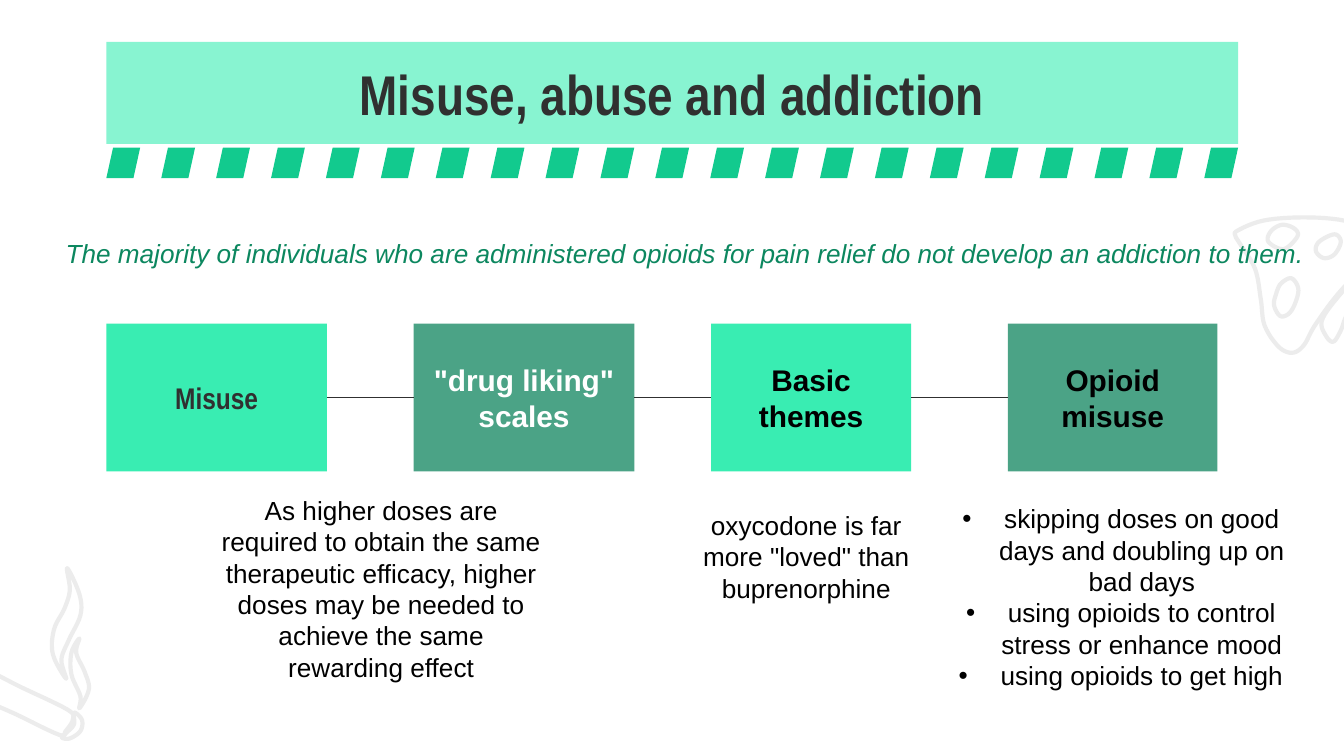
from itertools import pairwise

from lxml import etree
from pptx import Presentation
from pptx.dml.color import RGBColor
from pptx.enum.shapes import MSO_CONNECTOR, MSO_SHAPE
from pptx.enum.text import MSO_ANCHOR, MSO_AUTO_SIZE, PP_ALIGN
from pptx.oxml.ns import qn
from pptx.util import Cm, Pt

RECTANGLE = MSO_SHAPE.RECTANGLE
STRIPE = MSO_SHAPE.FLOWCHART_DATA
STRAIGHT = MSO_CONNECTOR.STRAIGHT
TOP, MIDDLE = MSO_ANCHOR.TOP, MSO_ANCHOR.MIDDLE
LEFT, CENTER = PP_ALIGN.LEFT, PP_ALIGN.CENTER
NO_AUTOFIT = MSO_AUTO_SIZE.NONE

COLORS = {
    "banner": "88F4D1", "stripe": "12CA8E", "bright": "39EDB2", "deep": "4BA386",
    "dark": "303030", "black": "000000", "white": "FFFFFF", "accent": "0C875F",
    "doodle": "ECECEC",
}

CIGARETTE = [
    [(-0.43, 12.59), (0.4, 12.99), (1.27, 13.41), (1.38, 13.59), (1.24, 13.82),
     (1.12, 13.89), (0.3, 13.5), (-0.63, 13.06), (-0.38, 12.85)],
    [(1.4, 13.47), (1.55, 13.61), (1.52, 13.82), (1.32, 13.96), (1.17, 13.94),
     (1.27, 13.84), (1.4, 13.69)],
    [(1.27, 10.74), (1.5, 11.23), (1.52, 11.63), (1.3, 12.1), (1.16, 12.47),
     (1.25, 12.83), (1, 12.37), (1.02, 11.9), (1.22, 11.5), (1.32, 11.15)],
    [(1.5, 12.07), (1.44, 12.34), (1.6, 12.7), (1.68, 13.03), (1.5, 13.39),
     (1.52, 13.16), (1.35, 12.75), (1.35, 12.34)],
]
PIZZA = [
    [(23.39, 4.36), (23.88, 4.17), (24.64, 4.11), (25.4, 4.17), (25.88, 4.37),
     (26.04, 4.65), (25.93, 4.88), (25.65, 5.16), (25.22, 5.64), (24.84, 6.17),
     (24.64, 6.53), (24.42, 6.67), (24.16, 6.55), (23.9, 6.15), (23.83, 5.66),
     (23.72, 5.08), (23.43, 4.6), (23.35, 4.46)],
    [(24.98, 6.07), (25.25, 5.66), (25.62, 5.3), (25.96, 5.4), (26, 5.49),
     (25.83, 5.63), (25.48, 5.92), (25.34, 6.25), (25.2, 6.46), (25.06, 6.35)],
    [(24.93, 4.57), (25.22, 4.43), (25.34, 4.57), (25.22, 4.81), (25.02, 4.88),
     (24.87, 4.75)],
    [(24.02, 4.37), (24.23, 4.25), (24.46, 4.32), (24.52, 4.47), (24.26, 4.71),
     (23.97, 4.57)],
    [(24.21, 5.36), (24.41, 5.26), (24.54, 5.49), (24.41, 5.87), (24.21, 5.98),
     (24.08, 5.77), (24.12, 5.55)],
]
STEPS = [
    ("Misuse", 2.01, 4.17, "bright", "dark", "Arial Narrow"),
    ('"drug liking" scales', 7.82, 4.17, "deep", "white", "Arial"),
    ("Basic themes", 13.44, 3.78, "bright", "black", "Arial"),
    ("Opioid misuse", 19.05, 3.96, "deep", "black", "Arial"),
]
HABITS = [
    "skipping doses on good days and doubling up on bad days",
    "using opioids to control stress or enhance mood",
    "using opioids to get high",
]


def color(name):
    """Return the named colour."""
    return RGBColor.from_string(COLORS[name])


def place(shape, box):
    """Move a shape to a box of left, top, width and height in centimetres."""
    shape.left, shape.top, shape.width, shape.height = map(Cm, box)


def paint(shape, fill):
    """Give a shape a flat fill with neither outline nor shadow."""
    shape.fill.solid()
    shape.fill.fore_color.rgb = color(fill)
    shape.line.fill.background()
    shape.shadow.inherit = False


def write(shape, lines, size, ink, face="Arial", bold=False, italic=False,
          align=CENTER, anchor=MIDDLE, wrap=True):
    """Fill a shape with formatted paragraphs."""
    frame = shape.text_frame
    frame.text = "\n".join(lines)
    frame.auto_size = NO_AUTOFIT
    frame.word_wrap = wrap
    frame.vertical_anchor = anchor
    for para in frame.paragraphs:
        para.alignment = align
        para.space_before = Pt(0)
        for span in para.runs:
            span.font.name = face
            span.font.size = Pt(size)
            span.font.bold = bold
            span.font.italic = italic
            span.font.color.rgb = color(ink)


def smooth_loop(points, steps=6):
    """Return a closed curve that runs smoothly through the points."""
    curve = []
    for index, here in enumerate(points):
        before = points[index - 1]
        after = points[(index + 1) % len(points)]
        beyond = points[(index + 2) % len(points)]
        for step in range(steps):
            t = step / steps
            curve.append(tuple(
                Cm(b + t * (c - a + t * (2 * a - 5 * b + 4 * c - d
                                         + t * (3 * b - a - 3 * c + d))) / 2)
                for a, b, c, d in zip(before, here, after, beyond)))
    return curve


def add_doodle(page, loops):
    """Draw a line drawing made of closed curves."""
    for loop in loops:
        start, *rest = smooth_loop(loop)
        builder = page.shapes.build_freeform(*start)
        builder.add_line_segments(rest, close=True)
        outline = builder.convert_to_shape()
        outline.fill.background()
        outline.line.color.rgb = color("doodle")
        outline.line.width = Pt(2.25)
        outline.shadow.inherit = False


def add_header(page, box):
    """Place the title on its banner."""
    title = page.shapes.title
    place(title, box)
    paint(title, "banner")
    write(title, ["Misuse, abuse and addiction"], 30, "dark", "Arial Narrow", bold=True)


def add_stripes(page, box, count=21, stripe_width=0.64):
    """Spread slanted stripes evenly over the box."""
    left, top, width, height = box
    pitch = (width - stripe_width) / (count - 1)
    for index in range(count):
        stripe = page.shapes.add_shape(STRIPE, 0, 0, 0, 0)
        place(stripe, (left + index * pitch, top, stripe_width, height))
        paint(stripe, "stripe")


def add_steps(page, top, height):
    """Place the row of labelled boxes and join neighbours."""
    boxes = []
    for label, left, width, fill, ink, face in STEPS:
        step = page.shapes.add_shape(RECTANGLE, 0, 0, 0, 0)
        place(step, (left, top, width, height))
        paint(step, fill)
        write(step, [label], 16, ink, face, bold=True)
        boxes.append(step)
    for first, second in pairwise(boxes):
        joint = page.shapes.add_connector(STRAIGHT, 0, 0, 0, 0)
        joint.begin_connect(first, 3)
        joint.end_connect(second, 1)
        joint.line.color.rgb = color("dark")
        joint.line.width = Pt(0.75)
        etree.SubElement(joint._element.spPr, qn("a:effectLst"))


def add_note(page, box, text, ink="black", **style):
    """Place a paragraph of plain text."""
    note = page.shapes.add_textbox(0, 0, 0, 0)
    place(note, box)
    write(note, [text], 14, ink, anchor=TOP, **style)


def add_habits(page, box):
    """Place the bulleted list in the body placeholder."""
    body = page.placeholders[1]
    place(body, box)
    write(body, HABITS, 14, "black")
    body.text_frame.margin_bottom = Cm(0.83)
    for para in body.text_frame.paragraphs:
        properties = para._p.get_or_add_pPr()
        properties.set("marL", str(Cm(0.79)))
        properties.set("indent", str(Cm(-0.79)))


def main():
    """Build the deck and save it."""
    deck = Presentation()
    deck.slide_width, deck.slide_height = Cm(25.4), Cm(14.29)
    page = deck.slides.add_slide(deck.slide_layouts[1])
    add_doodle(page, CIGARETTE)
    add_doodle(page, PIZZA)
    add_header(page, (2.01, 0.79, 21.39, 1.93))
    add_stripes(page, (2.01, 2.79, 21.39, 0.58))
    add_steps(page, 6.12, 2.79)
    add_habits(page, (17.5, 9.27, 7.37, 4.72))
    add_note(page, (0.99, 4.37, 24.03, 1.45),
             "The majority of individuals who are administered opioids for pain relief "
             "do not develop an addiction to them.",
             "accent", italic=True, align=LEFT, wrap=False)
    add_note(page, (12.8, 9.5, 4.88, 2.64),
             'oxycodone is far more "loved" than buprenorphine')
    add_note(page, (3.89, 9.22, 6.63, 4.45),
             "As higher doses are required to obtain the same therapeutic efficacy, "
             "higher doses may be needed to achieve the same rewarding effect")
    deck.save("out.pptx")


if __name__ == "__main__":
    main()
